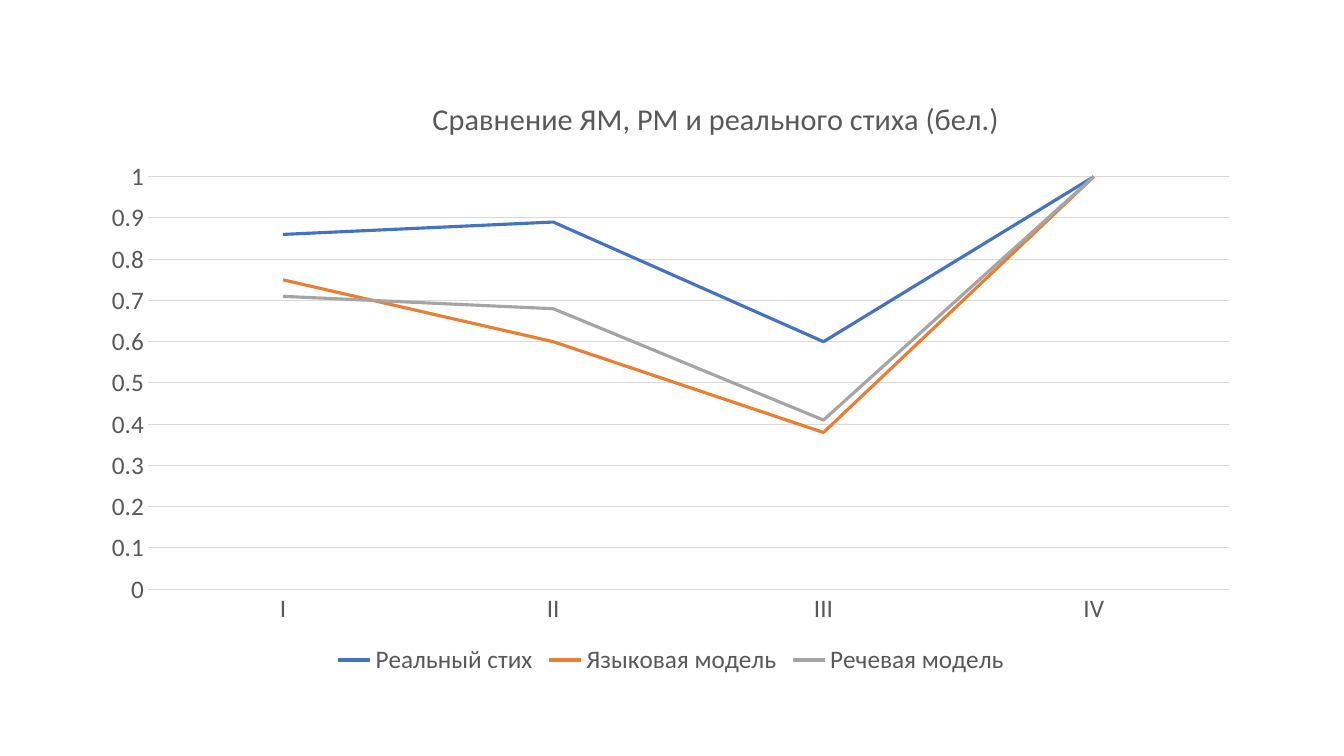
from pptx import Presentation
from pptx import util as u
from pptx.chart.data import CategoryChartData
from pptx.dml.color import RGBColor
from pptx.enum import chart as ch
from pptx.oxml import parse_xml
from pptx.oxml.ns import nsdecls, qn

GREY_TEXT = "595959"
GREY_LINE = "D9D9D9"
FEET = ("I", "II", "III", "IV")
MODELS = (
    ("Реальный стих", (0.86, 0.89, 0.6, 1), "4472C4"),
    ("Языковая модель", (0.75, 0.6, 0.38, 1), "ED7D31"),
    ("Речевая модель", (0.71, 0.68, 0.41, 1), "A5A5A5"),
)


def color(hex_code):
    return RGBColor.from_string(hex_code)


def style_font(font, size=18, fill=GREY_TEXT):
    font.name, font.size, font.bold = "Calibri", u.Pt(size), False
    font.color.rgb = color(fill)


def style_line(line, fill, width):
    line.color.rgb = color(fill)
    line.width = u.Pt(width)


def write_text(frame, content, **fmt):
    run = frame.paragraphs[0].add_run()
    run.text = content
    style_font(run.font, **fmt)


def place(part, index, **fractions):
    """Lay out a chart part by fractions of the chart's size."""
    for old in part.findall(qn("c:layout")):
        part.remove(old)
    target = '<c:layoutTarget val="inner"/>' if "w" in fractions else ""
    modes = "".join(f'<c:{k}Mode val="edge"/>' for k in "xy")
    values = "".join(f'<c:{k} val="{v}"/>' for k, v in fractions.items())
    part.insert(index, parse_xml(
        f'<c:layout {nsdecls("c")}><c:manualLayout>{target}{modes}{values}'
        "</c:manualLayout></c:layout>"))


def add_comparison(slide):
    data = CategoryChartData()
    data.categories = FEET
    for name, values, _ in MODELS:
        data.add_series(name, values)
    comparison = slide.shapes.add_chart(
        ch.XL_CHART_TYPE.LINE, u.Inches(0.89), u.Inches(0.73),
        u.Inches(11.53), u.Inches(6.02), data).chart
    style_font(comparison.font)

    # Lines
    comparison.plots[0].vary_by_categories = False
    for model, (_, _, fill) in zip(comparison.plots[0].series, MODELS):
        model.smooth = False
        model.marker.style = ch.XL_MARKER_STYLE.NONE
        style_line(model.format.line, fill, 2.25)
    return comparison


def style_axes(comparison):
    feet, share = comparison.category_axis, comparison.value_axis
    for axis in (feet, share):
        axis.major_tick_mark = axis.minor_tick_mark = ch.XL_TICK_MARK.NONE
        style_font(axis.tick_labels.font)
    style_line(feet.format.line, GREY_LINE, 0.75)
    share.format.line.fill.background()
    share.minimum_scale, share.maximum_scale, share.major_unit = 0, 1, 0.1
    share.has_major_gridlines = True
    style_line(share.major_gridlines.format.line, GREY_LINE, 0.75)


def add_title_and_legend(comparison):
    comparison.has_title = True
    title = comparison.chart_title
    title.include_in_layout = False
    write_text(title.text_frame, "Сравнение ЯМ, РМ и реального стиха (бел.)",
               size=21.6)
    comparison.has_legend = True
    comparison.legend.position = ch.XL_LEGEND_POSITION.BOTTOM
    comparison.legend.include_in_layout = False
    style_font(comparison.legend.font)

    # Title sits right of centre, above the plot
    chart_xml = comparison.element.find(qn("c:chart"))
    place(chart_xml.find(qn("c:title")), 1, x=0.29, y=0.03)
    place(chart_xml.find(qn("c:plotArea")), 0, x=0.05, y=0.17, w=0.93, h=0.68)


def main():
    prs = Presentation()
    prs.slide_width, prs.slide_height = u.Inches(13.33), u.Inches(7.5)
    slide = prs.slides.add_slide(prs.slide_layouts[6])
    comparison = add_comparison(slide)
    style_axes(comparison)
    add_title_and_legend(comparison)
    prs.save("out.pptx")


if __name__ == "__main__":
    main()
